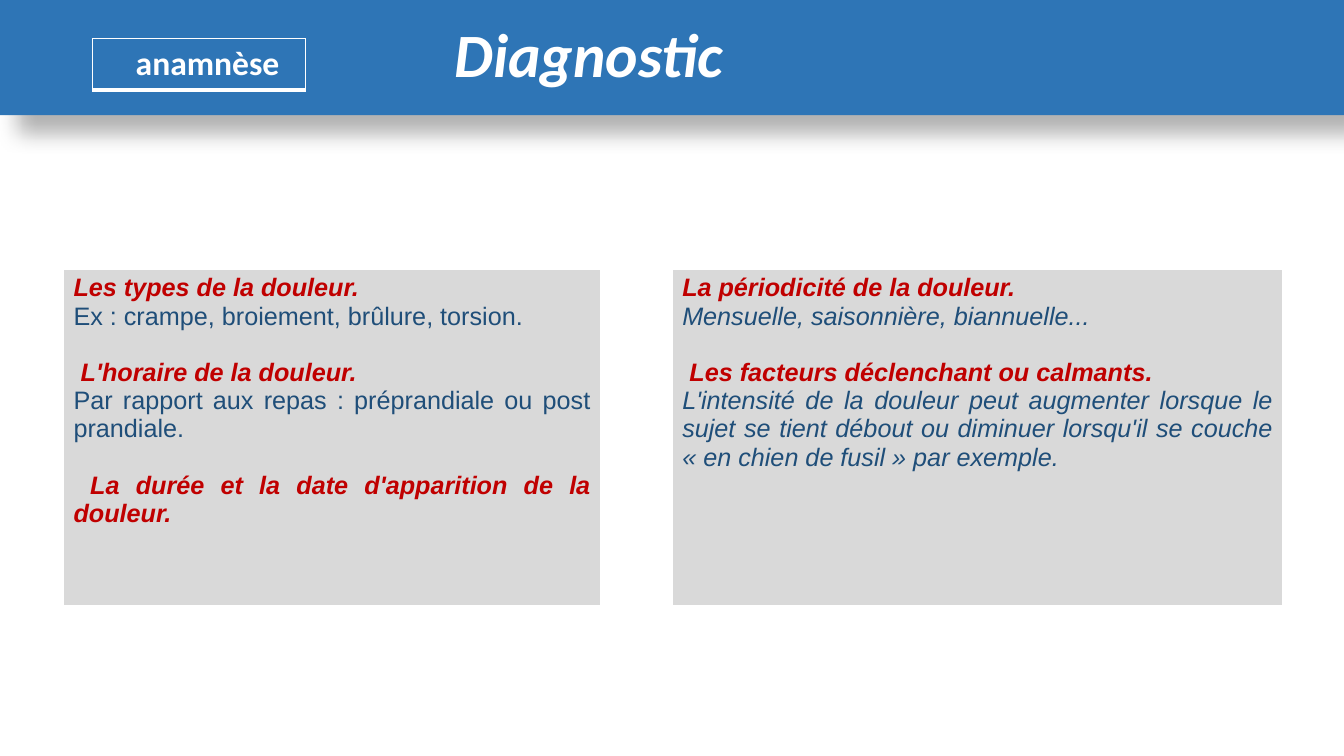
from lxml import etree
from pptx import Presentation
from pptx.dml.color import RGBColor
from pptx.enum.text import MSO_ANCHOR, PP_ALIGN
from pptx.oxml import parse_xml
from pptx.oxml.ns import nsdecls, qn
from pptx.util import Cm, Pt

LEFT, JUSTIFY = PP_ALIGN.LEFT, PP_ALIGN.JUSTIFY
MIDDLE = MSO_ANCHOR.MIDDLE

COLOURS = {
    "banner": "2E75B6",
    "white": "FFFFFF",
    "panel": "D9D9D9",
    "heading": "C00000",
    "detail": "1F4E79",
    "shadow": "000000",
}
BORDERS = {"a:lnL": 1, "a:lnR": 1, "a:lnT": 1, "a:lnB": 3}
PANEL_TOP, PANEL_HEIGHT = 6.78, 8.51

PAIN_TYPES = [
    ("Les types de la douleur.", 0, "Ex : crampe, broiement, brûlure, torsion."),
    ("L'horaire de la douleur.", 0.18,
     "Par rapport aux repas : préprandiale ou post prandiale."),
    ("La durée et la date d'apparition de la douleur.", 0.42, None),
]
PAIN_FACTORS = [
    ("La périodicité de la douleur.", 0, "Mensuelle, saisonnière, biannuelle..."),
    ("Les facteurs déclenchant ou calmants.", 0.18,
     "L'intensité de la douleur peut augmenter lorsque le sujet se tient débout "
     "ou diminuer lorsqu'il se couche « en chien de fusil » par exemple."),
]


def colour(name):
    return RGBColor.from_string(COLOURS[name])


def add_span(para, text, font, size, tint, bold=False, italic=False):
    span = para.add_run()
    span.text = text
    span.font.name = font
    span.font.size = Pt(size)
    span.font.bold = bold
    span.font.italic = italic
    span.font.color.rgb = colour(tint)


def add_shadow(shape):
    shape._element.spPr.append(parse_xml(
        f'<a:effectLst {nsdecls("a")}>'
        f'<a:outerShdw blurRad="{Pt(15)}" dist="{Pt(18)}" dir="2700000" '
        'algn="tl" rotWithShape="0">'
        f'<a:srgbClr val="{COLOURS["shadow"]}"><a:alpha val="30000"/></a:srgbClr>'
        '</a:outerShdw></a:effectLst>'))


def format_title(page):
    title = page.shapes.title
    title.left, title.top, title.width, title.height = Cm(0), Cm(0), Cm(33.87), Cm(2.9)
    title.fill.solid()
    title.fill.fore_color.rgb = colour("banner")
    add_shadow(title)
    frame = title.text_frame
    frame.vertical_anchor = MIDDLE
    frame.margin_left = Cm(11.45)
    para = frame.paragraphs[0]
    para.alignment = LEFT
    para.line_spacing = 0.9
    add_span(para, "Diagnostic", "Calibri", 44, "white", True, True)


def add_borders(cell):
    properties = cell._tc.get_or_add_tcPr()
    for tag, width in BORDERS.items():
        line = etree.SubElement(properties, qn(tag), w=str(Pt(width)))
        fill = etree.SubElement(line, qn("a:solidFill"))
        etree.SubElement(fill, qn("a:srgbClr"), val=COLOURS["white"])


def add_box(page, left, top, width, height, fill):
    table = page.shapes.add_table(
        1, 1, Cm(left), Cm(top), Cm(width), Cm(height)).table
    table.first_row = False
    table.horz_banding = False
    cell = table.cell(0, 0)
    add_borders(cell)
    cell.fill.solid()
    cell.fill.fore_color.rgb = colour(fill)
    return cell


def add_label(page):
    cell = add_box(page, 2.33, 0.98, 5.36, 1.27, "banner")
    cell.margin_left = Cm(1.09)
    add_span(cell.text_frame.paragraphs[0], "anamnèse", "Calibri", 24, "white", True)


def add_panel(page, left, width, topics, italic_details):
    cell = add_box(page, left, PANEL_TOP, width, PANEL_HEIGHT, "panel")
    frame = cell.text_frame
    for number, (heading, indent, detail) in enumerate(topics):
        para = frame.add_paragraph() if number else frame.paragraphs[0]
        para.alignment = JUSTIFY
        para.space_before = Pt(20 if number else 0)
        para._p.get_or_add_pPr().set("indent", str(Cm(indent)))
        add_span(para, heading, "Arial", 18, "heading", True, True)
        if detail:
            para = frame.add_paragraph()
            para.alignment = JUSTIFY
            add_span(para, detail, "Arial", 18, "detail", italic=italic_details)


def main():
    deck = Presentation()
    deck.slide_width, deck.slide_height = Cm(33.87), Cm(19.05)
    page = deck.slides.add_slide(deck.slide_layouts[5])
    format_title(page)
    add_label(page)
    add_panel(page, 1.6, 13.54, PAIN_TYPES, False)
    add_panel(page, 16.94, 15.39, PAIN_FACTORS, True)
    deck.save("out.pptx")


if __name__ == "__main__":
    main()
